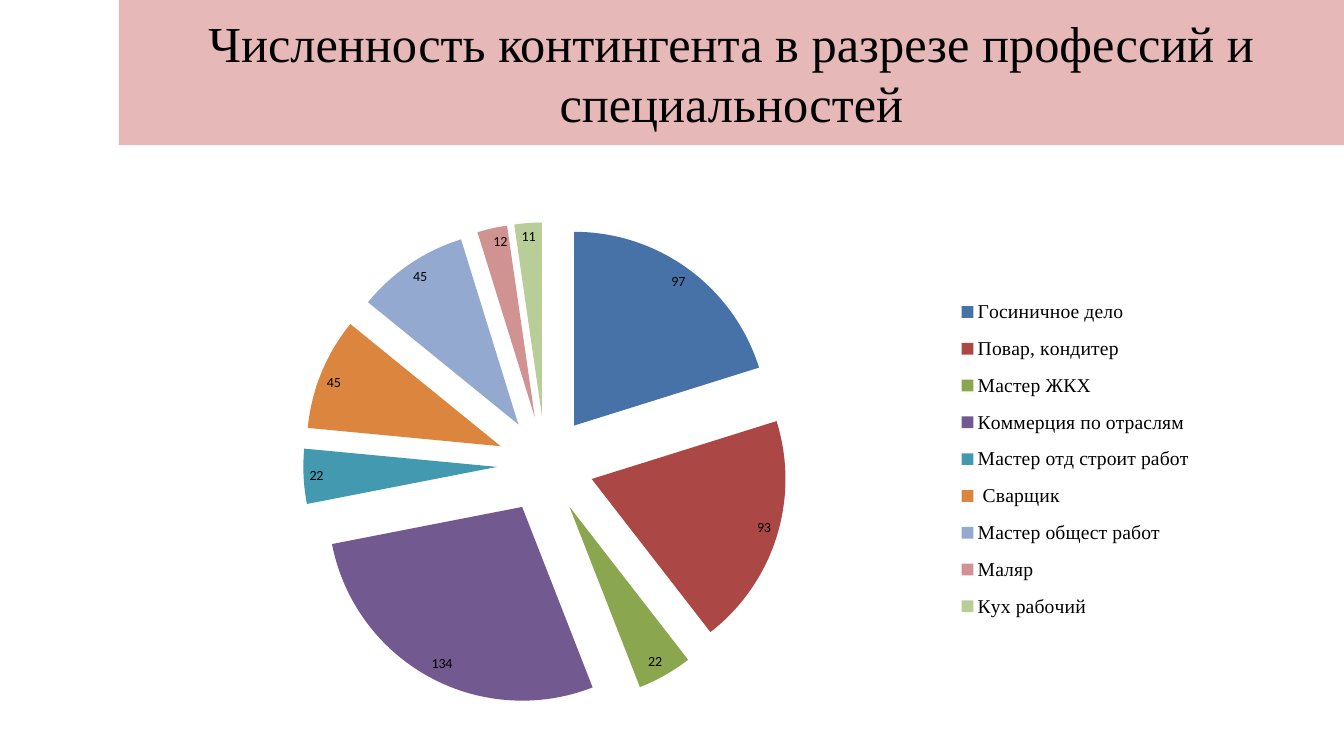
from dataclasses import dataclass
from typing import Any

from lxml.etree import Element, SubElement
from pptx import Presentation
from pptx.chart.data import CategoryChartData
from pptx.dml.color import RGBColor
from pptx.enum.chart import XL_CHART_TYPE as ChartType
from pptx.enum.chart import XL_LABEL_POSITION as LabelPosition
from pptx.enum.chart import XL_LEGEND_POSITION as LegendPosition
from pptx.enum.shapes import MSO_SHAPE as Preset
from pptx.enum.text import MSO_ANCHOR as Anchor
from pptx.enum.text import PP_ALIGN as Align
from pptx.oxml.ns import qn
from pptx.util import Inches, Pt


@dataclass(frozen=True)
class Specialty:
    name: str
    students: int
    color: str


SPECIALTIES = [
    Specialty("Госиничное дело", 97, "4672A8"),
    Specialty("Повар, кондитер", 93, "AB4744"),
    Specialty("Мастер ЖКХ", 22, "8AA64F"),
    Specialty("Коммерция по отраслям", 134, "725990"),
    Specialty("Мастер отд строит работ", 22, "4299B0"),
    Specialty(" Сварщик", 45, "DC853E"),
    Specialty("Мастер общест работ", 45, "93A9CF"),
    Specialty("Маляр", 12, "D09392"),
    Specialty("Кух рабочий", 11, "B8CD97"),
]
EXPLOSION_PERCENT = 25
HEADING_FONT = {"name": "Times New Roman", "size": Pt(36)}
LABEL_FONT = {"name": "Calibri", "size": Pt(10)}
LEGEND_FONT = {"name": "Times New Roman", "size": Pt(14)}


def paint(color_format: Any, color: str) -> None:
    color_format.rgb = RGBColor.from_string(color)


def set_format(target: Any, values: dict[str, Any]) -> None:
    for attribute, value in values.items():
        setattr(target, attribute, value)


def set_font(font: Any, values: dict[str, Any]) -> None:
    set_format(font, values)
    paint(font.color, "000000")


def make_layout(inner: bool, **fractions: float) -> Any:
    """Build a manual chart layout from fractions of the chart area."""
    layout = Element(qn("c:layout"))
    manual = SubElement(layout, qn("c:manualLayout"))
    settings = {"layoutTarget": "inner"} if inner else {}
    settings |= {"xMode": "edge", "yMode": "edge"} | fractions
    for tag, value in settings.items():
        SubElement(manual, qn(f"c:{tag}")).set("val", str(value))
    return layout


def place_plot_and_legend(chart: Any) -> None:
    plot_area = chart._chartSpace.find(f".//{qn('c:plotArea')}")
    legend = chart._chartSpace.find(f".//{qn('c:legend')}")
    for parent in (plot_area, legend):
        for automatic in parent.findall(qn("c:layout")):
            parent.remove(automatic)
    plot_area.insert(0, make_layout(True, x=0.17, y=0.06, w=0.44, h=0.91))
    legend.find(qn("c:legendPos")).addnext(
        make_layout(False, x=0.76, y=0.18, w=0.22, h=0.65))


def add_heading(slide: Any, text: str) -> None:
    heading = slide.shapes.add_shape(
        Preset.RECTANGLE, Inches(1.18), 0, Inches(12.15), Inches(1.44))
    heading.shadow.inherit = False
    heading.fill.solid()
    paint(heading.fill.fore_color, "E6B9B8")
    heading.line.fill.background()
    set_format(heading.text_frame, {"word_wrap": True, "vertical_anchor": Anchor.MIDDLE})
    paragraph = heading.text_frame.paragraphs[0]
    paragraph.text = text
    paragraph.alignment = Align.CENTER
    set_font(paragraph.font, HEADING_FONT)


def add_specialty_pie(slide: Any, specialties: list[Specialty]) -> None:
    enrolment = CategoryChartData()
    enrolment.categories = [specialty.name for specialty in specialties]
    enrolment.add_series("Series 1", [specialty.students for specialty in specialties])
    chart = slide.shapes.add_chart(
        ChartType.PIE, Inches(1.14), Inches(1.89), Inches(10.95), Inches(5.28),
        enrolment).chart
    set_format(chart, {"has_title": False, "has_legend": True})
    set_font(chart.font, LABEL_FONT)
    set_format(chart.legend, {"position": LegendPosition.RIGHT, "include_in_layout": False})
    set_font(chart.legend.font, LEGEND_FONT)

    pie = chart.plots[0]
    set_format(pie, {"vary_by_categories": True, "has_data_labels": True})
    set_format(pie.data_labels, {"show_value": True, "show_percentage": False,
                                 "position": LabelPosition.INSIDE_END})
    set_font(pie.data_labels.font, LABEL_FONT)

    students = pie.series[0]
    for index, specialty in enumerate(specialties):
        sector = students.points[index].format
        sector.fill.solid()
        paint(sector.fill.fore_color, specialty.color)
        sector.line.fill.background()
    explosion = Element(qn("c:explosion"))
    explosion.set("val", str(EXPLOSION_PERCENT))
    students._element.find(qn("c:dPt")).addprevious(explosion)
    place_plot_and_legend(chart)


def main() -> None:
    presentation = Presentation()
    set_format(presentation, {"slide_width": Inches(13.33), "slide_height": Inches(7.5)})
    slide = presentation.slides.add_slide(presentation.slide_layouts[6])
    add_heading(slide, "Численность контингента в разрезе профессий и специальностей")
    add_specialty_pie(slide, SPECIALTIES)
    presentation.save("out.pptx")


if __name__ == "__main__":
    main()
